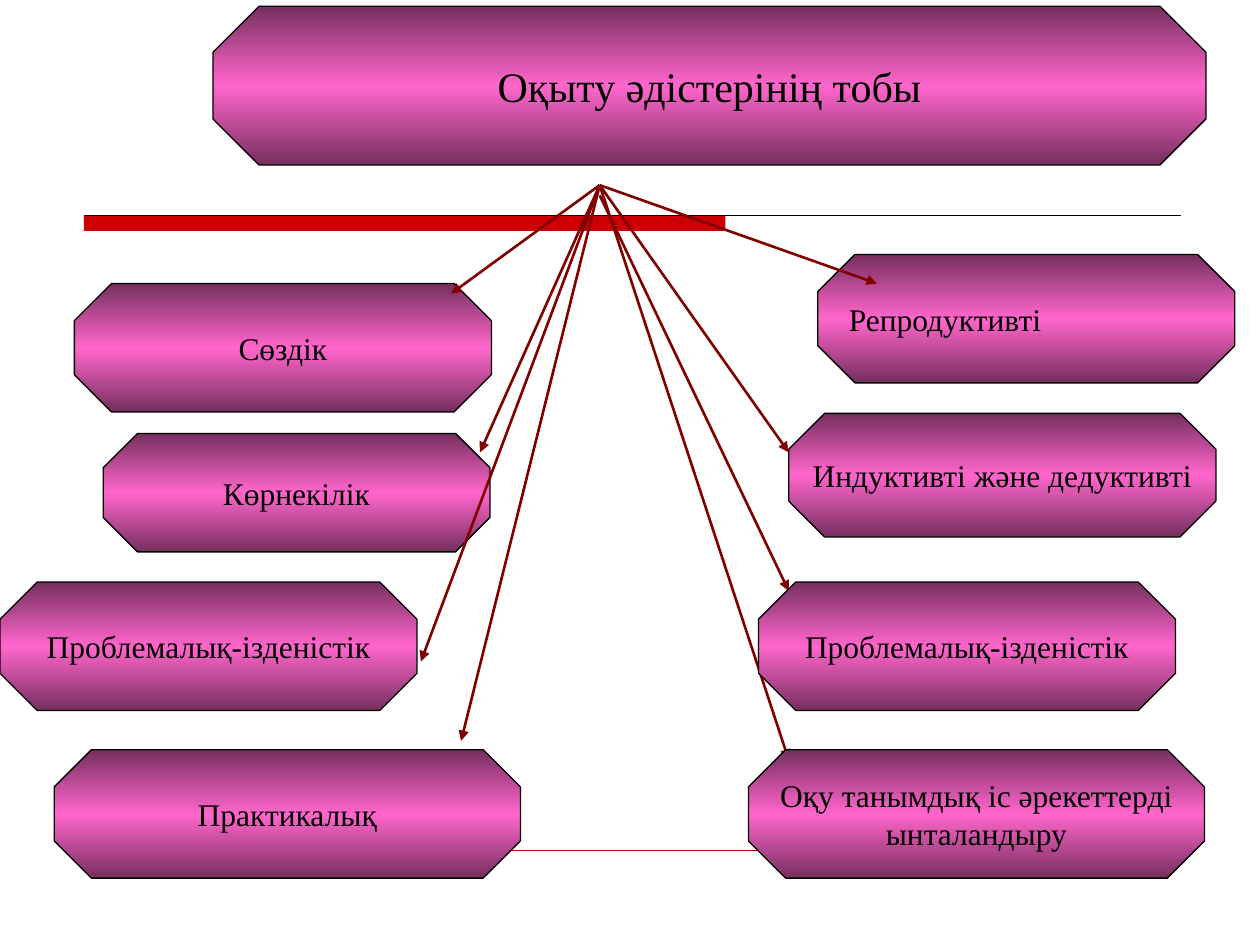
"""Build a slide that shows the group of teaching methods."""
from copy import deepcopy
from pptx import Presentation
from pptx.dml.color import RGBColor
from pptx.enum.shapes import MSO_CONNECTOR as Link, MSO_SHAPE as Form
from pptx.enum.text import MSO_ANCHOR as Anchor, PP_ALIGN as Align
from pptx.oxml.ns import qn
from pptx.util import Pt

RED = RGBColor(0xCC, 0x00, 0x00)
MAROON = RGBColor(0x80, 0x00, 0x00)
PLUM = RGBColor(0x76, 0x2F, 0x5E)
PINK = RGBColor(0xFF, 0x66, 0xCC)
BLACK = RGBColor(0x00, 0x00, 0x00)


class Sketch:
    """Hold the style and the current slide."""

    font = {"name": "Times New Roman", "bold": False}
    blend = {0: PLUM, 0.5: PINK, 1: PLUM}
    edge = 0.75

    def __init__(self, slide):
        self.slide = slide

    def bar(self, left, top, width, height):
        """Draw a plain red bar."""
        shape = self.slide.shapes.add_shape(
            Form.RECTANGLE, Pt(left), Pt(top), Pt(width), Pt(height))
        shape.shadow.inherit = False
        shape.fill.solid()
        shape.fill.fore_color.rgb = RED
        shape.line.fill.background()

    def line(self, start, end, color, width, arrow=False):
        """Draw a straight line, with an arrowhead if asked."""
        link = self.slide.shapes.add_connector(
            Link.STRAIGHT, *(Pt(value) for value in (*start, *end)))
        link.line.color.rgb = color
        link.line.width = Pt(width)
        if arrow:
            tail = link.line._get_or_add_ln().makeelement(
                qn("a:tailEnd"), {"type": "triangle"})
            link.line._get_or_add_ln().append(tail)
        props = link._element.spPr
        props.append(props.makeelement(qn("a:effectLst"), {}))

    def plate(self, text, left, top, width, height, size=18,
              align=Align.CENTER, wrap=False):
        """Draw a shaded octagon with its label."""
        shape = self.slide.shapes.add_shape(
            Form.OCTAGON, Pt(left), Pt(top), Pt(width), Pt(height))
        shape.shadow.inherit = False
        shape.adjustments[0] = 0.29
        self.shade(shape)
        shape.line.color.rgb = BLACK
        shape.line.width = Pt(self.edge)
        frame = shape.text_frame
        frame.text = text
        frame.word_wrap = wrap
        frame.vertical_anchor = Anchor.MIDDLE
        for para in frame.paragraphs:
            para.alignment = align
            for key, value in {**self.font, "size": Pt(size)}.items():
                setattr(para.font, key, value)
            para.font.color.rgb = BLACK

    def shade(self, shape):
        """Fill a shape with the vertical blend."""
        shape.fill.gradient()
        shape.fill.gradient_angle = 270
        stops = shape._element.spPr.find(".//" + qn("a:gsLst"))
        stops.append(deepcopy(stops[0]))
        for stop, (place, color) in zip(shape.fill.gradient_stops,
                                        self.blend.items()):
            stop.position = place
            stop.color.rgb = color


def main():
    """Build and save the slide."""
    deck = Presentation()
    deck.slide_width, deck.slide_height = Pt(720), Pt(540)
    sketch = Sketch(deck.slides.add_slide(deck.slide_layouts[6]))
    wide, tall = 238.3, 73.4
    third, last = 332.6, 428.4
    hub = (342.7, 105.8)
    search = "Проблемалық-ізденістік"

    sketch.bar(48, 123, 366.5, 9)
    sketch.line((48, 123), (674.6, 123), BLACK, 0.5)
    sketch.line((48, 486), (672, 486), RED, 0.25)

    sketch.plate("Оқыту әдістерінің тобы", 121.7, 3.6, 567.4, 90.7, size=24)
    sketch.plate("Сөздік", 42.5, 162, wide, tall)
    sketch.plate("Көрнекілік", 59, 247.7, 221, 67.7)
    sketch.plate("Репродуктивті", 467.3, 145.4, wide, tall,
                 align=Align.LEFT, wrap=True)
    sketch.plate("Индуктивті және дедуктивті", 450.7, 236.2, 244.1, 70.6)
    sketch.plate("Практикалық", 31, last, 266.4, tall)
    sketch.plate(search, 0, third, wide, tall)

    for end in ((257.8, 167.8), (274.3, 258.5), (501.1, 162),
                (450.7, 258.5), (450.7, 434.2), (240.5, 378),
                (263.5, 423.4)):
        sketch.line(hub, end, MAROON, 1.5, arrow=True)
    sketch.line((hub[0], 111.6), (450.7, 337.7), MAROON, 1.5, arrow=True)

    sketch.plate(search, 433.4, third, wide, tall)
    sketch.plate("Оқу танымдық іс әрекеттерді\nынталандыру",
                 427.7, last, 260.6, tall)
    deck.save("out.pptx")


if __name__ == "__main__":
    main()
